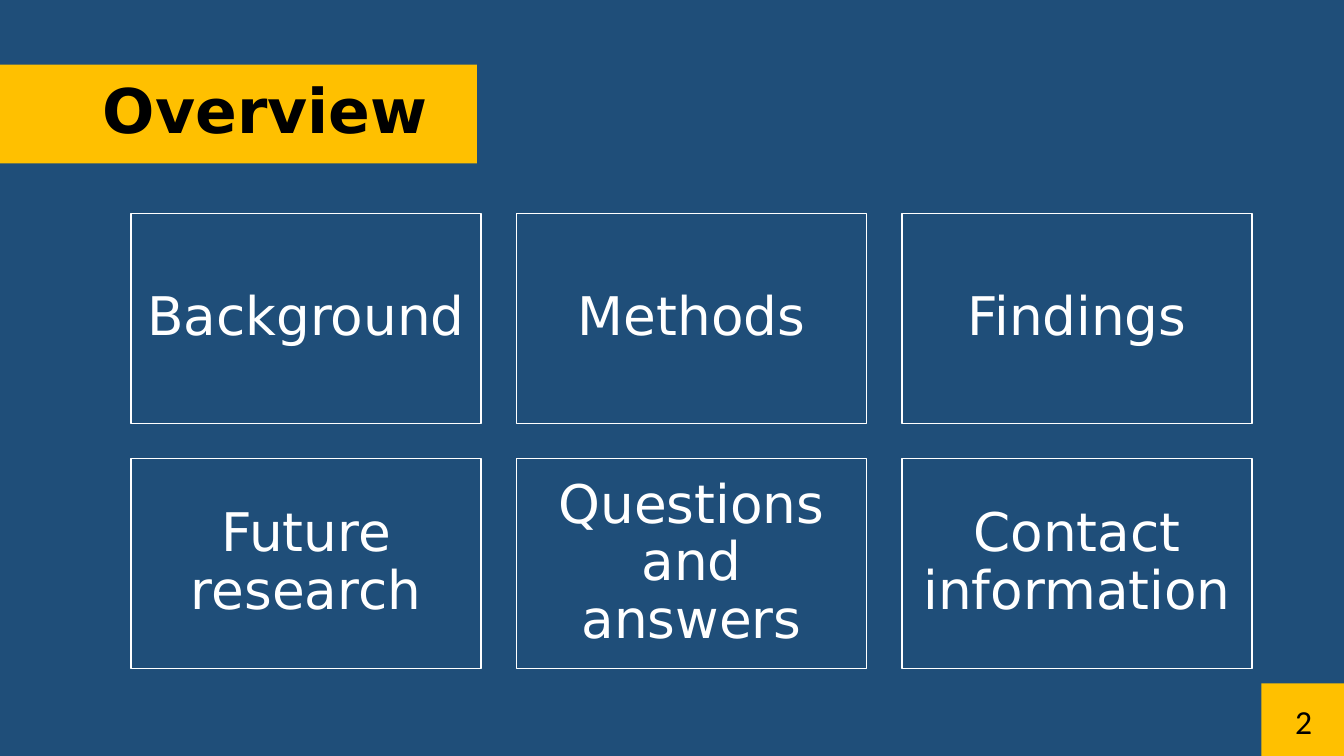
import pptx
import pptx.dml.color
import pptx.enum.shapes
import pptx.enum.text
import pptx.util
from pptx.dml.color import RGBColor
from pptx.enum.text import MSO_ANCHOR, PP_ALIGN
from pptx.util import Inches

NAVY = RGBColor(0x1F, 0x4E, 0x79)
GOLD = RGBColor(0xFF, 0xC0, 0x00)
WHITE = RGBColor(0xFF, 0xFF, 0xFF)
BLACK = RGBColor(0x00, 0x00, 0x00)
HEADING_FONT = "DejaVu Sans"
NUMBER_FONT = "Calibri"

TOPICS = ["Background", "Methods", "Findings",
          "Future research", "Questions and answers", "Contact information"]


def add_rectangle(slide, left, top, width, height, fill=None, outline=None):
    rectangle = slide.shapes.add_shape(
        pptx.enum.shapes.MSO_SHAPE.RECTANGLE,
        Inches(left), Inches(top), Inches(width), Inches(height))
    rectangle.shadow.inherit = False
    if fill is None:
        rectangle.fill.background()
    else:
        rectangle.fill.solid()
        rectangle.fill.fore_color.rgb = fill
    if outline is None:
        rectangle.line.fill.background()
    else:
        rectangle.line.color.rgb = outline
        rectangle.line.width = pptx.util.Pt(1)
    return rectangle


def write(frame, text, size, font, color, align, bold=False, spacing=1.0, inset=None):
    """Put one vertically centred paragraph into a text frame."""
    frame.word_wrap = True
    frame.auto_size = pptx.enum.text.MSO_AUTO_SIZE.NONE
    frame.vertical_anchor = MSO_ANCHOR.MIDDLE
    if inset is not None:
        frame.margin_left = frame.margin_right = Inches(inset)
        frame.margin_top = frame.margin_bottom = Inches(inset)
    paragraph = frame.paragraphs[0]
    paragraph.alignment = align
    paragraph.line_spacing = spacing
    run = paragraph.add_run()
    run.text = text
    run.font.size = pptx.util.Pt(size)
    run.font.name = font
    run.font.bold = bold
    run.font.color.rgb = color


def add_heading(slide, text, left, top, width, height):
    """Draw the gold banner from the slide's edge, with the title in front."""
    add_rectangle(slide, left, top, width, height, fill=GOLD)
    title = slide.shapes.title
    title.left, title.top = Inches(left + 0.92), Inches(top - 0.24)
    title.width, title.height = Inches(11.5), Inches(1.45)
    write(title.text_frame, text, 44, HEADING_FONT, BLACK, PP_ALIGN.LEFT,
          bold=True, spacing=0.9)
    title._element.getparent().append(title._element)


def add_topic_grid(slide, topics, left, top, width, height, columns=3, gap=0.35):
    rows = -(-len(topics) // columns)
    card_width = (width - gap * (columns - 1)) / columns
    card_height = (height - gap * (rows - 1)) / rows
    for index, topic in enumerate(topics):
        row, column = divmod(index, columns)
        card = add_rectangle(slide,
                             left + column * (card_width + gap),
                             top + row * (card_height + gap),
                             card_width, card_height, outline=WHITE)
        write(card.text_frame, topic, 38, HEADING_FONT, WHITE, PP_ALIGN.CENTER,
              spacing=0.9, inset=0.16)


def add_page_number(slide, number, left, top, width, height):
    add_rectangle(slide, left, top, width, height, fill=GOLD)
    label = slide.shapes.add_textbox(
        Inches(left + 0.12), Inches(top + 0.17), Inches(0.6), Inches(0.4))
    write(label.text_frame, number, 24, NUMBER_FONT, BLACK, PP_ALIGN.CENTER)


def build_overview(presentation):
    slide = presentation.slides.add_slide(
        presentation.slide_layouts.get_by_name("Title Only"))
    slide.background.fill.solid()
    slide.background.fill.fore_color.rgb = NAVY
    add_heading(slide, "Overview", 0, 0.64, 4.73, 0.98)
    add_topic_grid(slide, TOPICS, 1.3, 2.12, 11.12, 4.51)
    add_page_number(slide, "2", 12.51, 6.78, 0.82, 0.72)


def main():
    presentation = pptx.Presentation()
    presentation.slide_width = Inches(13.33)
    presentation.slide_height = Inches(7.5)
    build_overview(presentation)
    presentation.save("out.pptx")


if __name__ == "__main__":
    main()
